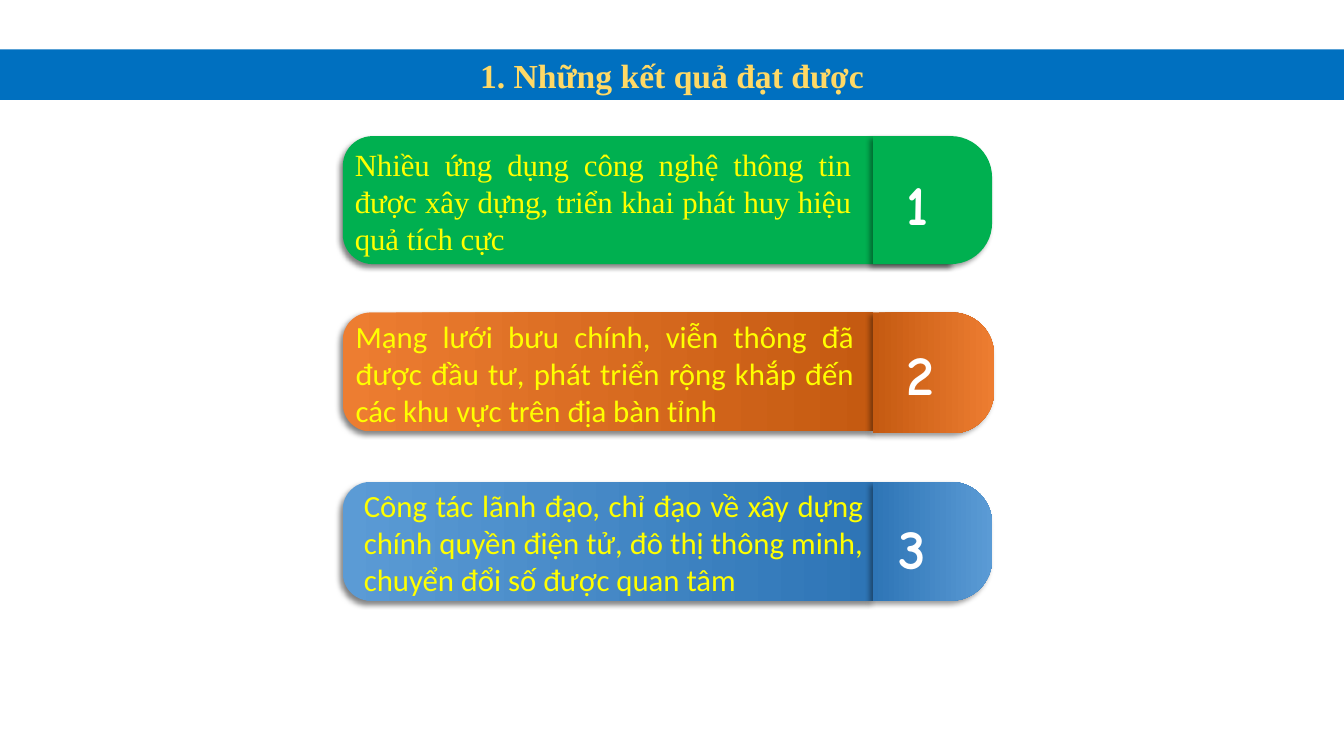
from collections import namedtuple
from lxml.etree import SubElement
from pptx import Presentation
from pptx.dml.color import RGBColor
from pptx.enum.shapes import MSO_SHAPE as SHAPE
from pptx.enum.text import MSO_ANCHOR as ANCHOR, MSO_AUTO_SIZE as AUTO, PP_ALIGN as ALIGN
from pptx.oxml.ns import qn
from pptx.util import Inches, Pt

LEFT, TAB_LEFT = 3.4, 8.66

# Offsets: caption from the row's corner, number from the tab's corner
Row = namedtuple("Row", "top height bar_width tab_width tab_height colors text font caption number")
ROWS = [
    Row(1.35, 1.27, 6.05, 1.18, 1.27, ["00B050"],
        "Nhiều ứng dụng công nghệ thông tin được xây dựng, triển khai phát huy hiệu quả tích cực",
        "Times New Roman", (0.02, 0.05, 5.12), (0.12, 0.28)),
    Row(3.1, 1.18, 5.26, 1.2, 1.2, ["ED7D31", "C55A11"],
        "Mạng lưới bưu chính, viễn thông đã được đầu tư, phát triển rộng khắp đến "
        "các khu vực trên địa bàn tỉnh",
        "Calibri", (0.03, 0, 5.14), (0.15, 0.22)),
    Row(4.78, 1.18, 5.26, 1.18, 1.18, ["5B9BD5", "2E75B6"],
        "Công tác lãnh đạo, chỉ đạo về xây dựng chính quyền điện tử, đô thị thông minh, "
        "chuyển đổi số được quan tâm",
        "Calibri", (0.11, 0, 5.15), (0.07, 0.26)),
]


def rgb(color):
    return RGBColor.from_string(color)


def write(sp, text, size, font, color, bold=False, align=ALIGN.CENTER, anchor=ANCHOR.MIDDLE):
    tf = sp.text_frame
    tf.word_wrap = True
    tf.auto_size = AUTO.NONE
    tf.vertical_anchor = anchor
    p = tf.paragraphs[0]
    p.alignment = align
    r = p.add_run()
    r.text = text
    f = r.font
    f.size, f.name, f.bold = Pt(size), font, bold
    f.color.rgb = rgb(color)


def add_text(s, box, text, **fmt):
    write(s.shapes.add_textbox(*map(Inches, box)), text, **fmt)


def add_shadow(sp, alpha):
    effects = SubElement(sp._element.spPr, qn("a:effectLst"))
    shadow = SubElement(effects, qn("a:outerShdw"), blurRad=str(Pt(4)), dist=str(Pt(3)),
                        dir=str(135 * 60000), algn="tr", rotWithShape="0")
    color = SubElement(shadow, qn("a:srgbClr"), val="000000")
    SubElement(color, qn("a:alpha"), val=str(alpha * 1000))


def add_rounded(s, box, rotation, corner, colors, angle, alpha):
    """Turn a shape with two round corners so that it covers the box."""
    x, y, w, h = box
    sp = s.shapes.add_shape(SHAPE.ROUND_2_SAME_RECTANGLE, Inches(x + (w - h) / 2),
                            Inches(y + (h - w) / 2), Inches(h), Inches(w))
    sp.rotation = rotation
    sp.adjustments[0], sp.adjustments[1] = corner, 0
    sp.line.fill.background()
    if len(colors) == 1:
        sp.fill.solid()
        sp.fill.fore_color.rgb = rgb(colors[0])
    else:
        sp.fill.gradient()
        sp.fill.gradient_angle = angle
        for stop, color in zip(sp.fill.gradient_stops, colors):
            stop.color.rgb = rgb(color)
    add_shadow(sp, alpha)
    return sp


def add_row(s, number, row):
    tab = (TAB_LEFT, row.top, row.tab_width, row.tab_height)
    add_rounded(s, (LEFT, row.top, row.bar_width, row.height), 270, 0.233, row.colors, 270, 50)
    sp = add_rounded(s, tab, 90, 0.347, row.colors[::-1], 90, 40)
    sp._element.spPr.find(qn("a:xfrm")).set("flipH", "1")
    dx, dy = row.number
    add_text(s, (TAB_LEFT + dx, row.top + dy, 0.64, 0.77), str(number),
             size=40, font="Comic Neue", color="FFFFFF", bold=True)
    dx, dy, width = row.caption
    add_text(s, (LEFT + dx, row.top + dy, width, 1.21), row.text, size=22, font=row.font,
             color="FFFF00", align=ALIGN.JUSTIFY, anchor=ANCHOR.TOP)


def add_title(s, box, text):
    sp = s.shapes.title
    sp.left, sp.top, sp.width, sp.height = map(Inches, box)
    sp.fill.solid()
    sp.fill.fore_color.rgb = rgb("0070C0")
    write(sp, text, size=24, font="Times New Roman", color="FFD966", bold=True)


def main():
    prs = Presentation()
    prs.slide_width, prs.slide_height = Inches(13.33), Inches(7.5)
    s = prs.slides.add_slide(prs.slide_layouts[5])
    add_title(s, (0, 0.49, 13.33, 0.5), "1. Những kết quả đạt được")
    for number, row in enumerate(ROWS, 1):
        add_row(s, number, row)
    prs.save("out.pptx")


if __name__ == "__main__":
    main()
